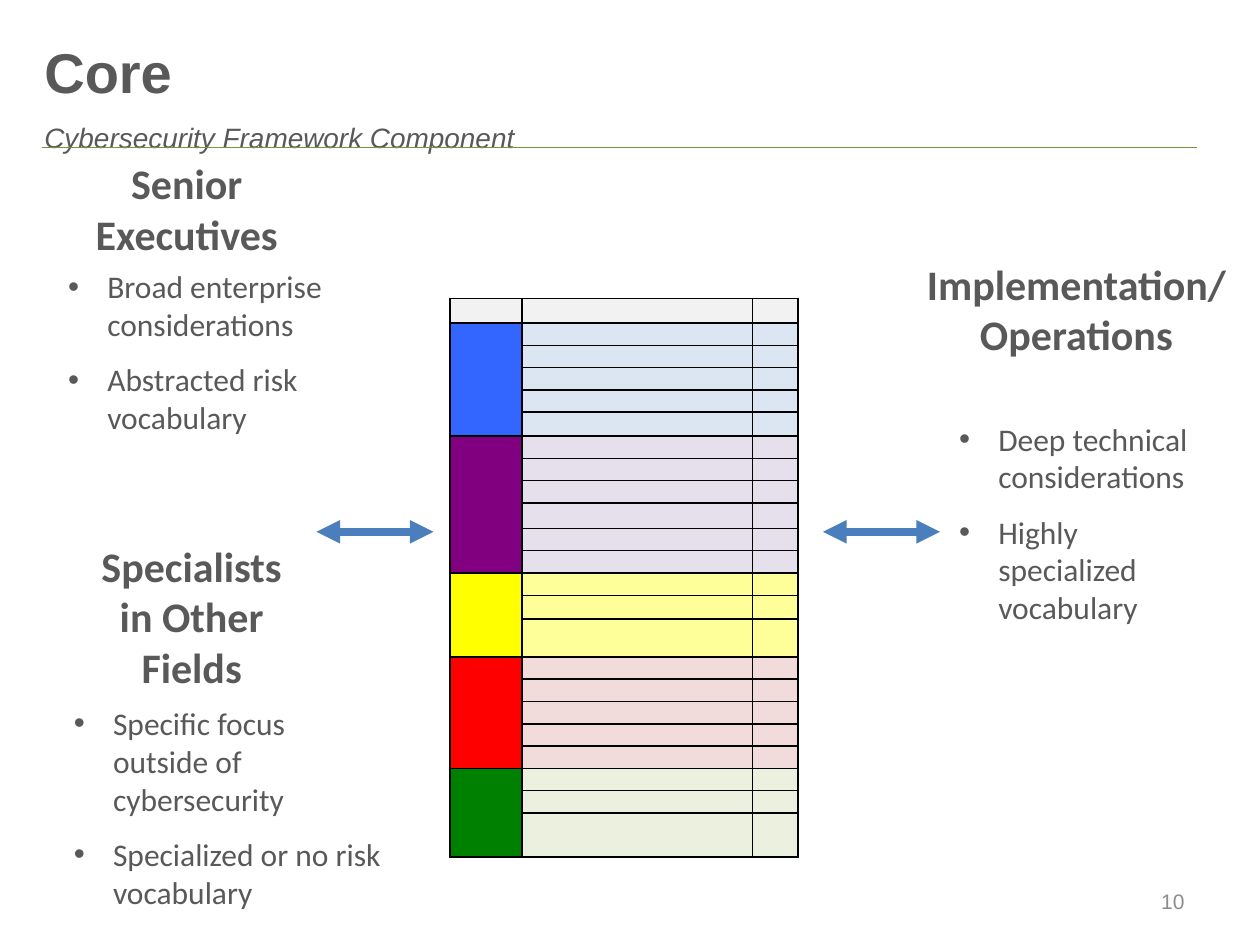
from lxml import etree
from pptx import Presentation
from pptx.dml.color import RGBColor
from pptx.enum import shapes, text
from pptx.oxml import ns
from pptx.util import Cm, Pt

GRAY = RGBColor(0x59, 0x59, 0x59)
NUMBER_GRAY = RGBColor(0x8C, 0x8C, 0x8C)
RULE_GREEN = RGBColor(0x77, 0x93, 0x3C)
ARROW_BLUE = RGBColor(0x4B, 0x7E, 0xBC)
HEADER_FILL = RGBColor(0xF2, 0xF2, 0xF2)
FUNCTIONS = [
    (5, RGBColor(0x33, 0x66, 0xFF), RGBColor(0xDC, 0xE6, 0xF2)),
    (6, RGBColor(0x80, 0x00, 0x80), RGBColor(0xE6, 0xE0, 0xEC)),
    (3, RGBColor(0xFF, 0xFF, 0x00), RGBColor(0xFF, 0xFF, 0x99)),
    (5, RGBColor(0xFF, 0x00, 0x00), RGBColor(0xF2, 0xDC, 0xDB)),
    (3, RGBColor(0x00, 0x80, 0x00), RGBColor(0xEB, 0xF1, 0xDE)),
]


def add_run(paragraph, words, size, font="Calibri", color=GRAY, bold=False, italic=False):
    run = paragraph.add_run()
    run.text = words
    run.font.size = Pt(size)
    run.font.name = font
    run.font.color.rgb = color
    run.font.bold = bold
    run.font.italic = italic


def add_line(x1, y1, x2, y2, color, width):
    line = slide.shapes.add_connector(
        shapes.MSO_CONNECTOR.STRAIGHT, Cm(x1), Cm(y1), Cm(x2), Cm(y2))
    line.line.color.rgb = color
    line.line.width = Pt(width)
    etree.SubElement(line._element.spPr, ns.qn("a:effectLst"))
    return line


prs = Presentation()
prs.slide_width, prs.slide_height = Cm(25.4), Cm(19.05)
slide = prs.slides.add_slide(prs.slide_layouts[4])
bodies = {p.placeholder_format.idx: p for p in slide.placeholders}

add_line(0.84, 2.97, 24.13, 2.97, RULE_GREEN, 0.75)

title = slide.shapes.title
title.left, title.top, title.width, title.height = Cm(0.64), Cm(1.12), Cm(23.5), Cm(2.11)
title.text_frame.vertical_anchor = text.MSO_ANCHOR.BOTTOM
title.text_frame.auto_size = text.MSO_AUTO_SIZE.NONE
heading = title.text_frame.paragraphs[0]
heading.alignment = text.PP_ALIGN.LEFT
heading.line_spacing = Pt(28)
add_run(heading, "Core", 32, "Arial", bold=True)
heading.add_line_break()
add_run(heading, "Cybersecurity Framework Component", 16, "Arial", italic=True)

row_heights = [0.45] * 23
for row, height in {0: 0.49, 5: 0.48, 9: 0.51, 13: 0.48, 14: 0.76, 22: 0.89}.items():
    row_heights[row] = height
core = slide.shapes.add_table(
    23, 3, Cm(9.07), Cm(6.02), Cm(7.02), Cm(sum(row_heights))).table
for column, width in zip(core.columns, [1.45, 4.65, 0.92]):
    column.width = Cm(width)
for row, height in zip(core.rows, row_heights):
    row.height = Cm(height)

row_fills = [(HEADER_FILL, HEADER_FILL)]
for count, strong, pale in FUNCTIONS:
    first = len(row_fills)
    row_fills += [(strong, pale)] * count
    core.cell(first, 0).merge(core.cell(first + count - 1, 0))

for row, (strong, pale) in enumerate(row_fills):
    for column, fill in enumerate([strong, pale, pale]):
        cell = core.cell(row, column)
        cell.margin_left = cell.margin_right = cell.margin_top = cell.margin_bottom = 0
        cell.text_frame.paragraphs[0]._p.get_or_add_endParaRPr().set("sz", "400")
        for side in ("lnL", "lnR", "lnT", "lnB"):
            border = etree.SubElement(cell._tc.get_or_add_tcPr(), ns.qn(f"a:{side}"), w="12700")
            ink = etree.SubElement(border, ns.qn("a:solidFill"))
            etree.SubElement(ink, ns.qn("a:srgbClr"), val="000000")
        cell.fill.solid()
        cell.fill.fore_color.rgb = fill

page_number = slide.shapes.add_textbox(Cm(18.21), Cm(17.65), Cm(5.92), Cm(1.02)).text_frame
page_number.word_wrap = True
page_number.vertical_anchor = text.MSO_ANCHOR.MIDDLE
page_number.paragraphs[0].alignment = text.PP_ALIGN.RIGHT
add_run(page_number.paragraphs[0], "10", 12, "Arial", NUMBER_GRAY)

audiences = [
    (bodies[1], (1.35, 3.05, 4.83, 2.31), "Senior Executives",
     bodies[2], (1.12, 5.26, 6.17, 3.68),
     ["Broad enterprise considerations", "Abstracted risk vocabulary"]),
    (bodies[3], (18.31, 5.08, 6.78, 2.31), "Implementation/ Operations",
     bodies[4], (19.08, 8.33, 5.64, 4.47),
     ["Deep technical considerations", "Highly specialized vocabulary"]),
    (slide.shapes.add_textbox(0, 0, 0, 0), (1.45, 10.77, 4.83, 3.33),
     "Specialists in Other Fields",
     slide.shapes.add_textbox(0, 0, 0, 0), (1.24, 14.07, 6.76, 4.47),
     ["Specific focus outside of cybersecurity", "Specialized or no risk vocabulary"]),
]
for name_box, name_place, name, concern_box, concern_place, concerns in audiences:
    for box, place in ((name_box, name_place), (concern_box, concern_place)):
        box.left, box.top, box.width, box.height = [Cm(length) for length in place]
        box.text_frame.word_wrap = True
        box.text_frame.auto_size = text.MSO_AUTO_SIZE.NONE
        box.text_frame.vertical_anchor = text.MSO_ANCHOR.TOP
    audience = name_box.text_frame.paragraphs[0]
    audience.alignment = text.PP_ALIGN.CENTER
    audience.space_before = Pt(0)
    add_run(audience, name, 24, bold=True)
    for i, concern in enumerate(concerns):
        frame = concern_box.text_frame
        item = frame.add_paragraph() if i else frame.paragraphs[0]
        item.space_before, item.space_after = Pt(0), Pt(10)
        properties = item._p.get_or_add_pPr()
        properties.set("marL", str(Cm(0.79)))
        properties.set("indent", str(-Cm(0.79)))
        etree.SubElement(properties, ns.qn("a:buFont"), typeface="Arial")
        etree.SubElement(properties, ns.qn("a:buChar"), char="•")
        add_run(item, concern, 18)

for left in (6.38, 16.59):
    arrow = add_line(left, 10.72, left + 2.36, 10.72, ARROW_BLUE, 4.5)
    for end in ("headEnd", "tailEnd"):
        etree.SubElement(arrow.line._get_or_add_ln(), ns.qn(f"a:{end}"), type="triangle")

prs.save("out.pptx")
